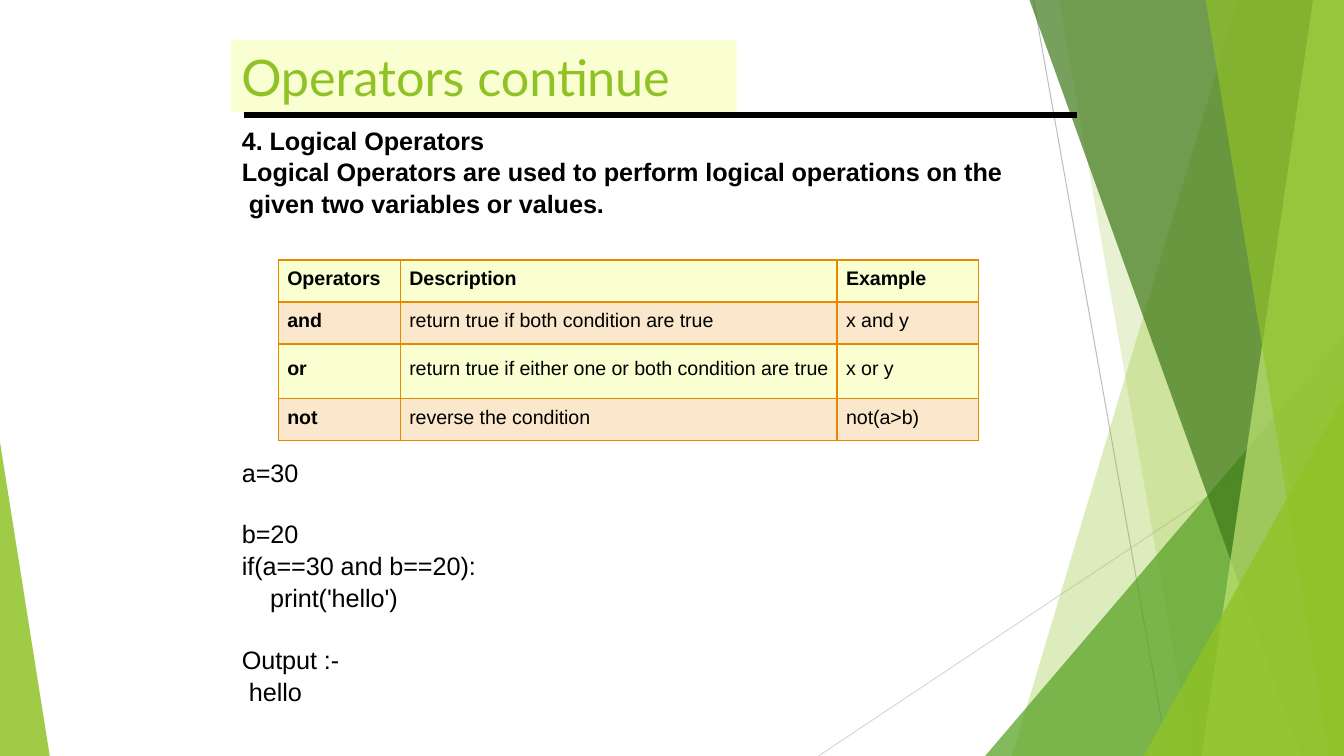
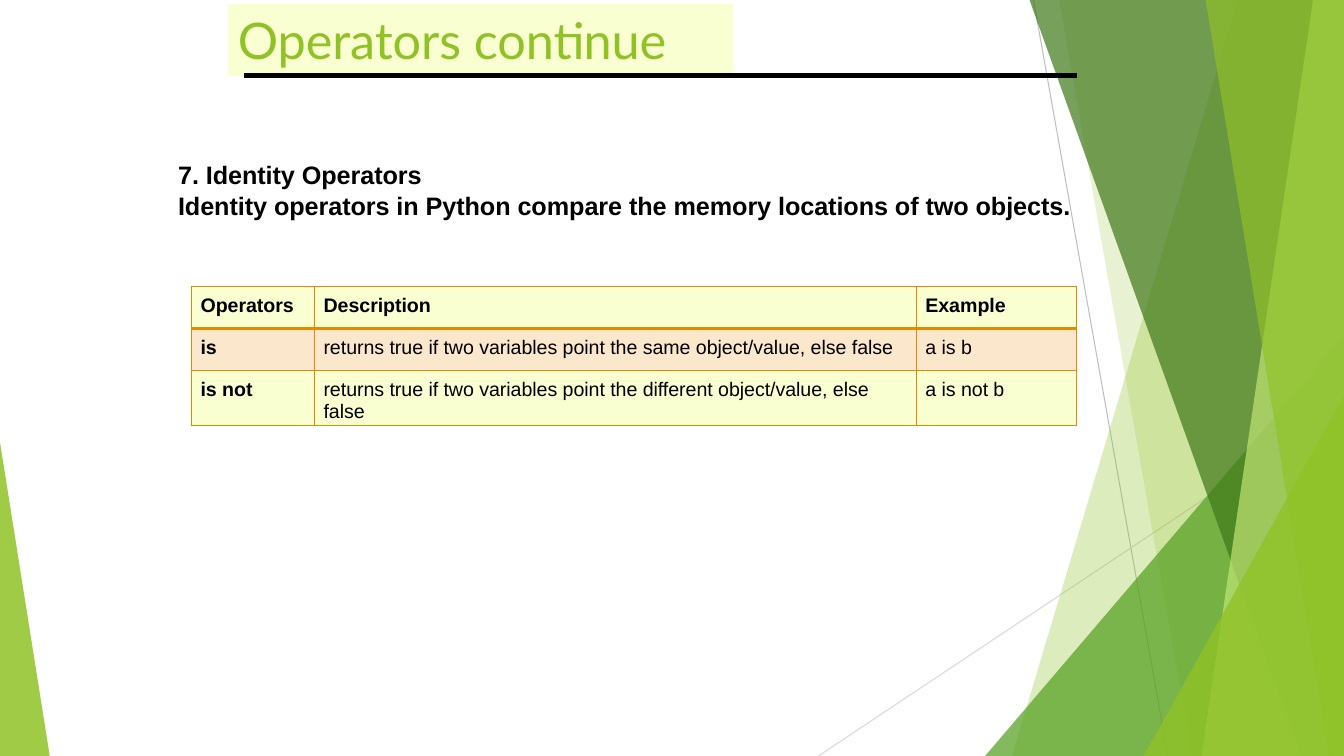
import lxml.etree
import pptx
import pptx.dml.color
import pptx.enum.shapes
import pptx.enum.text
import pptx.oxml.ns
import pptx.util

COLORS = {
    "lime": "90C226", "leaf": "54A021", "forest": "3F7819", "pale": "C0E474",
    "cream": "FAFFD1", "orange": "E68900", "black": "000000",
    "grey": "BFBFBF", "silver": "D9D9D9",
}
TITLE = {"name": "Lato", "size": pptx.util.Pt(36), "bold": False}
BODY = {"name": "Arial", "size": pptx.util.Pt(18)}
CELL = {"name": "Arial", "size": pptx.util.Pt(14)}
NO_MARGINS = dict.fromkeys(("margin_left", "margin_right", "margin_top", "margin_bottom"), 0)

prs = pptx.Presentation()
prs.slide_width = pptx.util.Inches(13.33)
prs.slide_height = pptx.util.Inches(7.5)
qn = pptx.oxml.ns.qn


def col(share):
    return round(prs.slide_width * share / 100)


def row(share):
    return round(prs.slide_height * share / 100)


def box(x, y, w, h):
    return col(x), row(y), col(w), row(h)


def rgb(name):
    return pptx.dml.color.RGBColor.from_string(COLORS[name])


def put(obj, values):
    for key, value in values.items():
        setattr(obj, key, value)


def paint(fill, owner, color, alpha=100):
    fill.solid()
    fill.fore_color.rgb = rgb(color)
    if alpha < 100:
        clr = next(owner.iter(qn("a:srgbClr")))
        lxml.etree.SubElement(clr, qn("a:alpha"), val=str(alpha * 1000))


def write(p, text, font, color, indent=0):
    p.text = text
    if indent:
        p._p.get_or_add_pPr().set("marL", str(pptx.util.Inches(indent)))
    for r in p.runs:
        put(r.font, font)
        r.font.color.rgb = rgb(color)
        r._r.get_or_add_rPr().set("spc", "-5")


def add_line(shapes, x1, y1, x2, y2, color, width):
    ln = shapes.add_connector(pptx.enum.shapes.MSO_CONNECTOR.STRAIGHT,
                              col(x1), row(y1), col(x2), row(y2))
    ln.line.color.rgb = rgb(color)
    ln.line.width = pptx.util.Pt(width)
    lxml.etree.SubElement(ln._element.spPr, qn("a:effectLst"))


def finish(sp, color, alpha):
    paint(sp.fill, sp._element.spPr, color, alpha)
    sp.line.fill.background()
    sp.shadow.inherit = False


def add_band(shapes, top, bottom, color, alpha):
    fb = shapes.build_freeform(col(top), 0)
    fb.add_line_segments([(col(100), 0), (col(100), row(100)), (col(bottom), row(100))])
    finish(fb.convert_to_shape(), color, alpha)


def add_wedge(shapes, x, y, w, apex, color, alpha):
    sp = shapes.add_shape(pptx.enum.shapes.MSO_SHAPE.ISOSCELES_TRIANGLE,
                          *box(x, y, w, 100 - y))
    sp.adjustments[0] = apex
    finish(sp, color, alpha)


def decorate(layout, slide):
    for ph in list(layout.placeholders)[1:]:
        ph.element.getparent().remove(ph.element)
    shapes = slide.shapes
    add_line(shapes, 76.9, 0, 86.9, 100, "grey", 0.75)
    add_line(shapes, 100, 53.7, 60.9, 100, "silver", 0.75)
    add_band(shapes, 92.1, 75.3, "lime", 30)
    add_band(shapes, 78.8, 88.7, "lime", 20)
    add_wedge(shapes, 73.3, 44.4, 26.7, 1, "leaf", 72)
    add_band(shapes, 76.6, 96.8, "forest", 70)
    add_band(shapes, 97.7, 89.4, "pale", 70)
    add_band(shapes, 89.7, 98.9, "lime", 65)
    add_wedge(shapes, 85.1, 52.4, 14.9, 1, "lime", 80)
    add_wedge(shapes, 0, 58.5, 3.7, 0, "lime", 85)
    for sp in list(shapes):
        if not sp.is_placeholder:
            layout.shapes.element.append(sp.element)


def add_title(slide, text, x, y, rule_y):
    sp = slide.shapes.title
    put(sp, dict(zip(("left", "top", "width", "height"), box(x, y, 37.6, 9.5))))
    paint(sp.fill, sp._element.spPr, "cream")
    tf = sp.text_frame
    put(tf, {**NO_MARGINS, "margin_left": pptx.util.Inches(0.1), "word_wrap": True,
             "auto_size": pptx.enum.text.MSO_AUTO_SIZE.NONE,
             "vertical_anchor": pptx.enum.text.MSO_ANCHOR.MIDDLE})
    p = tf.paragraphs[0]
    write(p, text, TITLE, "lime")
    p.alignment = pptx.enum.text.PP_ALIGN.LEFT
    add_line(slide.shapes, 18.15, rule_y, 80.1, rule_y, "black", 3.96)


def add_text(slide, area, lines, bold):
    tf = slide.shapes.add_textbox(*box(*area)).text_frame
    put(tf, {**NO_MARGINS, "margin_top": pptx.util.Inches(0.01), "word_wrap": True})
    for i, (text, indent, before) in enumerate(lines):
        p = tf.add_paragraph() if i else tf.paragraphs[0]
        write(p, text, {**BODY, "bold": bold}, "black", indent)
        p.space_before = pptx.util.Pt(before)


def add_borders(cell, widths):
    tcPr = cell._tc.get_or_add_tcPr()
    for side, width in zip("LRTB", widths):
        ln = lxml.etree.SubElement(tcPr, qn("a:ln" + side), w=str(pptx.util.Pt(width)))
        fill = lxml.etree.SubElement(ln, qn("a:solidFill"))
        lxml.etree.SubElement(fill, qn("a:srgbClr"), val=COLORS["orange"])


def add_grid(slide, x, y, widths, heights, rows):
    tbl = slide.shapes.add_table(len(rows), len(widths),
                                 *box(x, y, sum(widths), sum(heights))).table
    for c, width in zip(tbl.columns, widths):
        c.width = col(width)
    for r, height in zip(tbl.rows, heights):
        r.height = row(height)
    for i, texts in enumerate(rows):
        top = 0.14 if "or" in texts else 0.08
        for j, text in enumerate(texts):
            cell = tbl.cell(i, j)
            put(cell, {**NO_MARGINS, "margin_left": pptx.util.Inches(0.09),
                       "margin_top": pptx.util.Inches(top)})
            add_borders(cell, (1, 1, 2.25 if i == 1 else 1, 2.25 if i == 0 else 1))
            color, alpha = ("orange", 20) if i % 2 else ("cream", 100)
            clr_owner = cell._tc.tcPr
            cell.fill.solid()
            paint(cell.fill, clr_owner.find(qn("a:solidFill")), color, alpha)
            write(cell.text_frame.paragraphs[0], text,
                  {**CELL, "bold": i == 0 or j == 0}, "black")


def logical_slide(slide):
    add_title(slide, "Operators continue", 17.2, 5.3, 15.2)
    add_text(slide, (18, 16.4, 57.1, 12.4), [
        ("4. Logical Operators", 0, 1),
        ("Logical Operators are used to perform logical operations on the", 0, 1),
        ("given two variables or values.", 0.07, 1),
    ], True)
    add_grid(slide, 20.7, 34.4, (9.08, 32.5, 10.5), (5.55, 5.55, 7.25, 5.55), [
        ("Operators", "Description", "Example"),
        ("and", "return true if both condition are true", "x and y"),
        ("or", "return true if either one or both condition are true", "x or y"),
        ("not", "reverse the condition", "not(a>b)"),
    ])
    add_text(slide, (18, 60.4, 20, 32), [
        ("a=30", 0, 1),
        ("b=20", 0, 22),
        ("if(a==30 and b==20):", 0, 1),
        ("print('hello')", 0.28, 1),
        ("Output :-", 0, 23),
        ("hello", 0.07, 1),
    ], False)


def identity_slide(slide):
    add_title(slide, "Operators continue", 16.95, 0.5, 10)
    add_text(slide, (13.25, 20.9, 67.2, 12.3), [
        ("7. Identity Operators", 0, 1),
        ("Identity operators in Python compare the memory locations of two objects.", 0, 1),
    ], True)
    add_grid(slide, 14.25, 37.9, (9.15, 44.78, 11.93), (5.55, 5.55, 7.25), [
        ("Operators", "Description", "Example"),
        ("is", "returns true if two variables point the same object/value, else false", "a is b"),
        ("is not", "returns true if two variables point the different object/value, else\vfalse",
         "a is not b"),
    ])


def main():
    layout = prs.slide_layouts[5]
    slides = [prs.slides.add_slide(layout) for _ in range(2)]
    decorate(layout, slides[0])
    logical_slide(slides[0])
    identity_slide(slides[1])
    prs.save("out.pptx")


if __name__ == "__main__":
    main()
